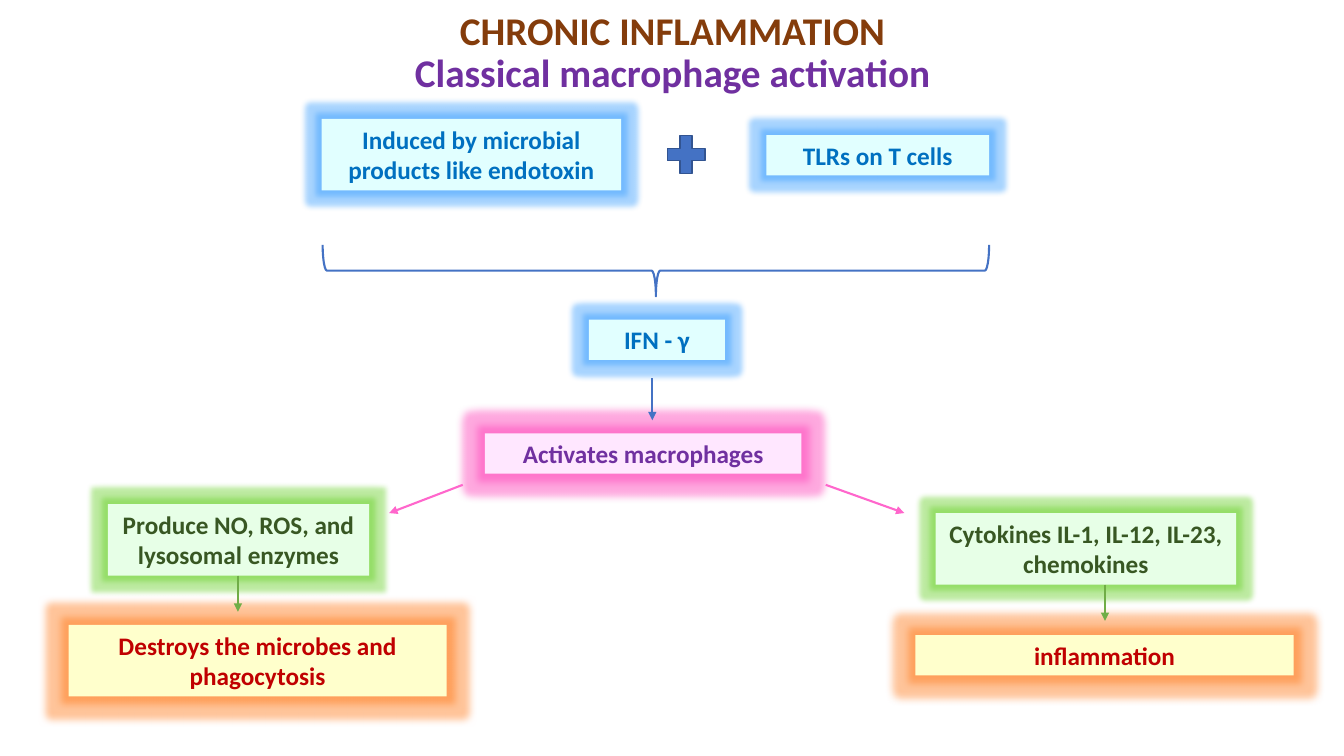
from lxml.etree import SubElement
from pptx import Presentation
from pptx.dml.color import RGBColor
from pptx.enum.shapes import MSO_CONNECTOR as Connector, MSO_SHAPE as Shape
from pptx.enum.text import MSO_ANCHOR as Anchor, PP_ALIGN as Align
from pptx.oxml.ns import qn
from pptx.util import Inches, Pt

COLORS = {
    "brown": "843C0B", "purple": "7030A0", "blue": "4472C4", "navy": "325491",
    "pink": "FF66CC", "green": "70AD47",
}
# style: fill, text colour, glow colour, glow radius in points
STYLES = {
    "trigger": ("E1FFFF", "0070C0", "2695FF", 8),
    "macrophage": ("FFE7FF", "7030A0", "FF28B0", 11),
    "product": ("E7FFE7", "385723", "5ACD14", 8),
    "outcome": ("FFFFCC", "C00000", "FF6C02", 11),
}
TITLE = [("CHRONIC INFLAMMATION", "brown"), ("Classical macrophage activation", "purple")]
ONE_LINE, TWO_LINES = 0.4, 0.71
# text, style, left, top, width, height
BOXES = [
    ("Induced by microbial products like endotoxin", "trigger", 3.19, 1.18, 2.97, TWO_LINES),
    ("TLRs on T cells", "trigger", 7.6, 1.34, 2.21, ONE_LINE),
    ("IFN - γ", "trigger", 5.84, 3.17, 1.35, ONE_LINE),
    ("Activates macrophages", "macrophage", 4.81, 4.3, 3.14, ONE_LINE),
    ("Produce NO, ROS, and lysosomal enzymes", "product", 1.07, 5, 2.59, TWO_LINES),
    ("Cytokines IL-1, IL-12, IL-23, chemokines", "product", 9.28, 5.09, 2.98, TWO_LINES),
    ("Destroys the microbes and phagocytosis", "outcome", 0.68, 6.2, 3.75, TWO_LINES),
    ("inflammation", "outcome", 9.08, 6.3, 3.75, ONE_LINE),
]
# colour, start, end
ARROWS = [
    ("blue", (6.47, 3.75), (6.47, 4.17)),
    ("pink", (4.59, 4.81), (3.86, 5.09)),
    ("pink", (8.19, 4.81), (8.97, 5.09)),
    ("green", (2.36, 5.71), (2.36, 6.07)),
    ("green", (10.96, 5.8), (10.96, 6.16)),
]


def rgb(color):
    return RGBColor.from_string(COLORS.get(color, color))


def write(para, text, *, color, size=18):
    span = para.add_run()
    span.text = text
    span.font.name, span.font.size, span.font.bold = "Calibri", Pt(size), True
    span.font.color.rgb = rgb(color)
    para.alignment = Align.CENTER


def add_shape(page, kind, left, top, width, height, *, fill=None, line=None, weight=1):
    shape = page.shapes.add_shape(kind, *map(Inches, (left, top, width, height)))
    shape.shadow.inherit = False
    if fill:
        shape.fill.solid()
        shape.fill.fore_color.rgb = rgb(fill)
    else:
        shape.fill.background()
    if line:
        shape.line.color.rgb = rgb(line)
        shape.line.width = Pt(weight)
    else:
        shape.line.fill.background()
    return shape


def add_glow(shape, color, radius):
    effects = shape._element.spPr.find(qn("a:effectLst"))
    glow = SubElement(effects, qn("a:glow"), rad=str(Pt(radius)))
    tint = SubElement(glow, qn("a:srgbClr"), val=color)
    SubElement(tint, qn("a:alpha"), val="40000")


def add_box(page, text, style, *place):
    fill, color, glow, radius = STYLES[style]
    box = add_shape(page, Shape.RECTANGLE, *place, fill=fill)
    add_glow(box, glow, radius)
    box.text_frame.word_wrap = True
    box.text_frame.vertical_anchor = Anchor.TOP
    write(box.text_frame.paragraphs[0], text, color=color)


def add_arrow(page, color, start, end):
    arrow = page.shapes.add_connector(Connector.STRAIGHT, *map(Inches, start + end))
    arrow.line.color.rgb = rgb(color)
    arrow.line.width = Pt(1.5)
    SubElement(arrow.line._get_or_add_ln(), qn("a:tailEnd"), type="triangle")
    SubElement(arrow._element.spPr, qn("a:effectLst"))


def add_title(page):
    box = page.shapes.add_textbox(*map(Inches, (0.92, 0, 11.5, 1.07)))
    box.text_frame.word_wrap = True
    box.text_frame.vertical_anchor = Anchor.MIDDLE
    para = box.text_frame.paragraphs[0]
    para.line_spacing = 0.9
    for index, (text, color) in enumerate(TITLE):
        if index:
            para.add_line_break()
        write(para, text, color=color, size=28)


def main():
    deck = Presentation()
    deck.slide_width, deck.slide_height = Inches(13.33), Inches(7.5)
    page = deck.slides.add_slide(deck.slide_layouts[6])
    add_title(page)
    for box in BOXES:
        add_box(page, *box)
    add_shape(page, Shape.MATH_PLUS, 6.55, 1.28, 0.51, 0.51, fill="blue", line="navy")
    brace = add_shape(page, Shape.RIGHT_BRACE, 6.25, -0.62, 0.51, 6.61, line="blue", weight=1.5)
    brace.rotation = 90
    for arrow in ARROWS:
        add_arrow(page, *arrow)
    deck.save("out.pptx")


if __name__ == "__main__":
    main()
